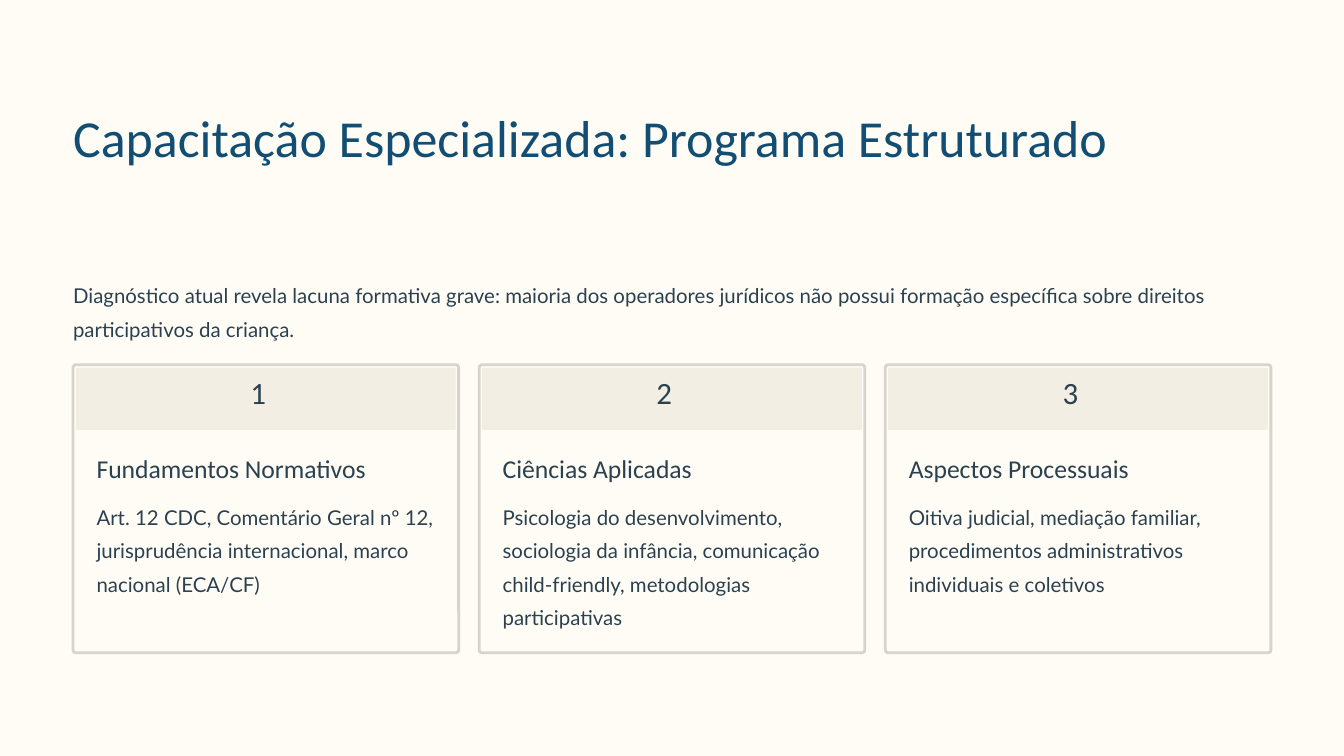
import dataclasses

import pptx
import pptx.dml.color
import pptx.enum.shapes
import pptx.enum.text
import pptx.util

Cm = pptx.util.Cm
Pt = pptx.util.Pt

TITLE = "Capacitação Especializada: Programa Estruturado"
DIAGNOSIS = (
    "Diagnóstico atual revela lacuna formativa grave: maioria dos operadores jurídicos "
    "não possui formação específica sobre direitos participativos da criança."
)
MODULES = [
    ("Fundamentos Normativos",
     "Art. 12 CDC, Comentário Geral nº 12, jurisprudência internacional, marco nacional (ECA/CF)"),
    ("Ciências Aplicadas",
     "Psicologia do desenvolvimento, sociologia da infância, comunicação child-friendly, "
     "metodologias participativas"),
    ("Aspectos Processuais",
     "Oitiva judicial, mediação familiar, procedimentos administrativos individuais e coletivos"),
]


@dataclasses.dataclass(frozen=True)
class TextStyle:
    font: str
    size: float
    leading: float
    color: str


@dataclasses.dataclass(frozen=True)
class Theme:
    paper: str = "FFFCF5"
    band: str = "F3EEE3"
    border: str = "D9D4C9"
    title: TextStyle = TextStyle("Calibri", 44.5, 55.5, "124E73")
    number: TextStyle = TextStyle("Calibri", 26.5, 26.5, "2B4150")
    heading: TextStyle = TextStyle("Calibri", 22, 27.5, "2B4150")
    body: TextStyle = TextStyle("Lato", 17.5, 28.5, "2B4150")


THEME = Theme()
PAGE_WIDTH, PAGE_HEIGHT = 40.64, 22.86
MARGIN = 2.21
CONTENT_WIDTH = PAGE_WIDTH - 2 * MARGIN
CARD_TOP, CARD_HEIGHT, CARD_GAP = 11.03, 8.71, 0.62
CARD_WIDTH = (CONTENT_WIDTH - CARD_GAP * (len(MODULES) - 1)) / len(MODULES)
BAND_INSET, BAND_HEIGHT = 0.09, 1.88
NUMBER_WIDTH = 0.94
TEXT_INSET = 0.71


def rgb(code):
    return pptx.dml.color.RGBColor.from_string(code)


def write(box, text, style):
    frame = box.text_frame
    frame.margin_left = frame.margin_top = frame.margin_right = frame.margin_bottom = 0
    frame.word_wrap = True
    frame.auto_size = pptx.enum.text.MSO_AUTO_SIZE.NONE
    frame.vertical_anchor = pptx.enum.text.MSO_ANCHOR.TOP
    para = frame.paragraphs[0]
    para.text = text
    para.alignment = pptx.enum.text.PP_ALIGN.LEFT
    para.line_spacing = Pt(style.leading)
    para.font.name = style.font
    para.font.size = Pt(style.size)
    para.font.color.rgb = rgb(style.color)


def add_text(page, left, top, width, height, text, style):
    box = page.shapes.add_textbox(Cm(left), Cm(top), Cm(width), Cm(height))
    write(box, text, style)


def add_panel(page, kind, left, top, width, height, fill):
    panel = page.shapes.add_shape(kind, Cm(left), Cm(top), Cm(width), Cm(height))
    panel.shadow.inherit = False
    panel.fill.solid()
    panel.fill.fore_color.rgb = rgb(fill)
    panel.line.fill.background()
    return panel


def add_card(page, index, heading, body):
    left = MARGIN + index * (CARD_WIDTH + CARD_GAP)
    kinds = pptx.enum.shapes.MSO_SHAPE
    card = add_panel(page, kinds.ROUNDED_RECTANGLE, left, CARD_TOP, CARD_WIDTH, CARD_HEIGHT, THEME.paper)
    card.adjustments[0] = 0.01
    card.line.color.rgb = rgb(THEME.border)
    card.line.width = Pt(2.4)
    add_panel(page, kinds.RECTANGLE, left + BAND_INSET, CARD_TOP + BAND_INSET,
              CARD_WIDTH - 2 * BAND_INSET, BAND_HEIGHT, THEME.band)
    add_text(page, left + (CARD_WIDTH - NUMBER_WIDTH) / 2, 11.48, NUMBER_WIDTH, 1.19,
             str(index + 1), THEME.number)
    text_left = left + TEXT_INSET
    text_width = CARD_WIDTH - 2 * TEXT_INSET
    add_text(page, text_left, 13.64, text_width, 0.99, heading, THEME.heading)
    add_text(page, text_left, 15.01, text_width, 4.04, body, THEME.body)


def main():
    deck = pptx.Presentation()
    deck.slide_width, deck.slide_height = Cm(PAGE_WIDTH), Cm(PAGE_HEIGHT)
    page = deck.slides.add_slide(deck.slide_layouts.get_by_name("Title Only"))
    page.background.fill.solid()
    page.background.fill.fore_color.rgb = rgb(THEME.paper)

    title = page.shapes.title
    title.left, title.top = Cm(MARGIN), Cm(3.12)
    title.width, title.height = Cm(CONTENT_WIDTH), Cm(3.94)
    write(title, TITLE, THEME.title)
    add_text(page, MARGIN, 8.31, CONTENT_WIDTH, 2.01, DIAGNOSIS, THEME.body)
    for index, (heading, body) in enumerate(MODULES):
        add_card(page, index, heading, body)
    deck.save("out.pptx")


if __name__ == "__main__":
    main()
